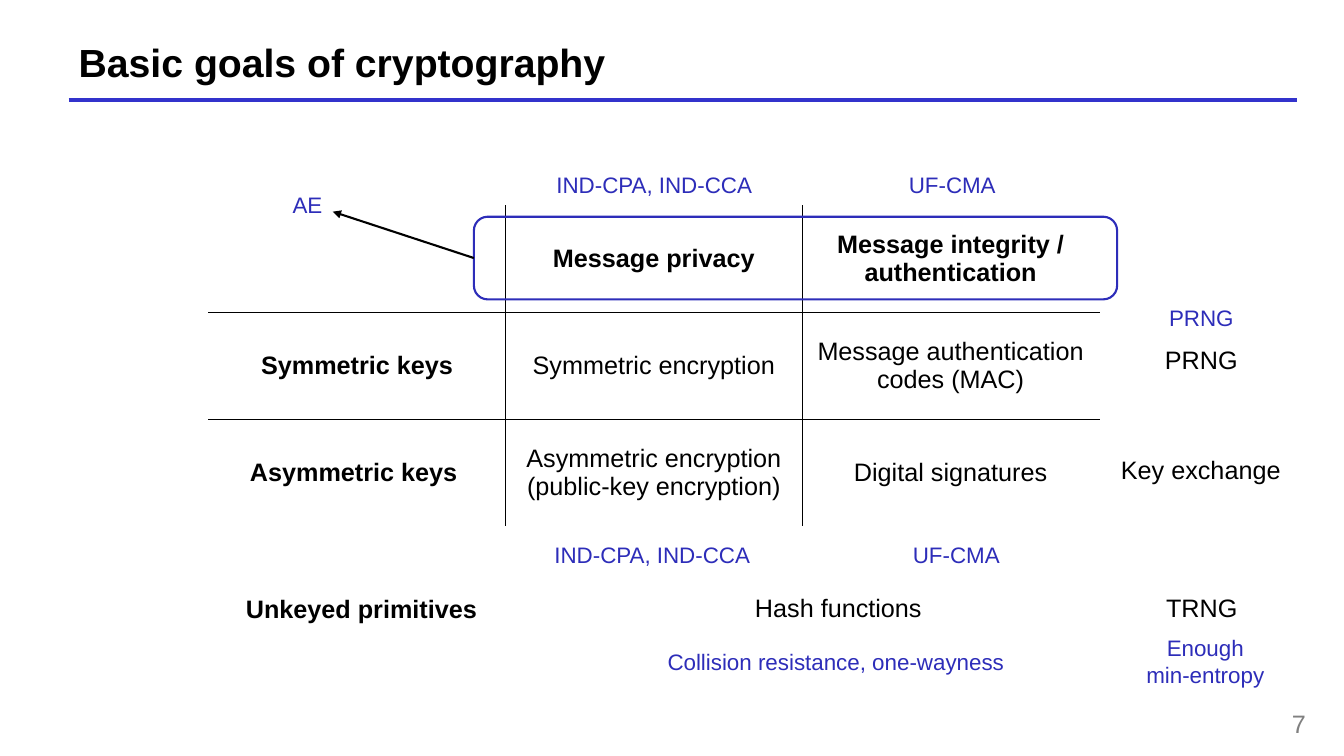
from dataclasses import dataclass

from lxml.etree import SubElement
from pptx import Presentation
from pptx.dml.color import RGBColor
from pptx.enum.shapes import MSO_CONNECTOR, MSO_SHAPE
from pptx.enum.text import MSO_ANCHOR, PP_ALIGN
from pptx.oxml import parse_xml
from pptx.oxml.ns import nsdecls, qn
from pptx.util import Inches, Pt


@dataclass(frozen=True)
class Theme:
    font: str = "Arial"
    black: str = "000000"
    blue: str = "2D2DB9"
    rule: str = "3333CC"
    gray: str = "808080"
    title: int = 28
    body: int = 18
    note: int = 16


THEME = Theme()

GOALS = [
    ["", "Message privacy", "Message integrity / authentication"],
    ["Symmetric keys", "Symmetric encryption", "Message authentication codes (MAC)"],
    ["Asymmetric keys ", "Asymmetric encryption (public-key encryption)", "Digital signatures"],
]

PRIMITIVES = [
    ("Key exchange", 11.01, 4.46, 1.8),
    ("Hash functions", 7.38, 5.83, 1.87),
    ("PRNG", 11.45, 3.37, 0.93),
    ("TRNG", 11.46, 5.83, 0.92),
]

SECURITY_NOTES = [
    ("IND-CPA, IND-CCA", 5.41, 1.65, 2.16, 0.37),
    ("IND-CPA, IND-CCA", 5.39, 5.32, 2.16, 0.37),
    ("UF-CMA", 8.91, 1.65, 1.07, 0.37),
    ("UF-CMA", 8.95, 5.32, 1.07, 0.37),
    ("AE", 2.8, 1.85, 0.5, 0.37),
    ("Collision resistance, one-wayness", 6.5, 6.38, 3.58, 0.37),
    ("PRNG", 11.49, 2.97, 0.85, 0.37),
    ("Enough \vmin-entropy ", 11.26, 6.24, 1.45, 0.64),
]


def set_attributes(target, values):
    for name, value in values.items():
        setattr(target, name, value)


def write_text(frame, text, size, color=THEME.black, bold=False, align=PP_ALIGN.CENTER):
    frame.text = text
    paragraph = frame.paragraphs[0]
    paragraph.alignment = align
    for run in paragraph.runs:
        set_attributes(run.font, {"name": THEME.font, "size": Pt(size), "bold": bold})
        run.font.color.rgb = RGBColor.from_string(color)


def add_label(slide, text, left, top, width, height, size, wrap=False,
              anchor=MSO_ANCHOR.TOP, **style):
    box = slide.shapes.add_textbox(Inches(left), Inches(top), Inches(width), Inches(height))
    set_attributes(box.text_frame, {"word_wrap": wrap, "vertical_anchor": anchor})
    write_text(box.text_frame, text, size, **style)


def add_title(slide, text):
    title = slide.shapes.title
    set_attributes(title, {"left": Inches(0.68), "top": Inches(0.36),
                           "width": Inches(12.18), "height": Inches(0.5)})
    set_attributes(title.text_frame, {"vertical_anchor": MSO_ANCHOR.MIDDLE, "word_wrap": True})
    write_text(title.text_frame, text, THEME.title, bold=True, align=PP_ALIGN.LEFT)


def add_line(slide, start, end, color, width, arrow=False):
    points = [Inches(value) for value in (*start, *end)]
    connector = slide.shapes.add_connector(MSO_CONNECTOR.STRAIGHT, *points)
    connector.line.color.rgb = RGBColor.from_string(color)
    connector.line.width = Pt(width)
    if arrow:
        SubElement(connector.line._get_or_add_ln(), qn("a:tailEnd"), type="triangle")
    SubElement(connector._element.spPr, qn("a:effectLst"))


def add_frame(slide, left, top, width, height):
    shape = slide.shapes.add_shape(MSO_SHAPE.ROUNDED_RECTANGLE, Inches(left), Inches(top),
                                   Inches(width), Inches(height))
    shape.shadow.inherit = False
    shape.fill.background()
    shape.line.color.rgb = RGBColor.from_string(THEME.blue)
    shape.line.width = Pt(1.5)


def add_borders(cell, sides):
    properties = cell._tc.get_or_add_tcPr()
    for side in sides:
        properties.append(parse_xml(
            f'<a:ln{side} {nsdecls("a")} w="{Pt(1)}"><a:solidFill>'
            f'<a:srgbClr val="{THEME.black}"/></a:solidFill></a:ln{side}>'))


def add_goal_table(slide, rows, left, top, width, height):
    last = len(rows) - 1
    table = slide.shapes.add_table(len(rows), len(rows[0]), Inches(left), Inches(top),
                                   Inches(width), Inches(height)).table
    set_attributes(table, {"first_row": False, "horz_banding": False})
    for row, texts in enumerate(rows):
        for column, text in enumerate(texts):
            cell = table.cell(row, column)
            inner = {"L": column > 0, "R": column < last, "T": row > 0, "B": row < last}
            add_borders(cell, [side for side, drawn in inner.items() if drawn])
            cell.fill.background()
            cell.vertical_anchor = MSO_ANCHOR.MIDDLE
            write_text(cell.text_frame, text, THEME.body, bold=row == 0 or column == 0)


def main():
    presentation = Presentation()
    set_attributes(presentation, {"slide_width": Inches(13.33), "slide_height": Inches(7.5)})
    slide = presentation.slides.add_slide(presentation.slide_layouts[5])
    add_line(slide, (0.68, 0.99), (12.86, 0.99), THEME.rule, 3)
    add_title(slide, "Basic goals of cryptography")
    add_label(slide, "7", 12.43, 6.98, 0.62, 0.36, THEME.body, wrap=True,
              color=THEME.gray, align=PP_ALIGN.RIGHT)
    add_goal_table(slide, GOALS, 2.07, 2.04, 8.83, 3.18)
    add_frame(slide, 4.7, 2.15, 6.38, 0.82)
    add_line(slide, (4.7, 2.56), (3.3, 2.1), THEME.black, 1.5, arrow=True)
    add_label(slide, "Unkeyed primitives", 2.34, 5.73, 2.75, 0.61, THEME.body, wrap=True,
              anchor=MSO_ANCHOR.MIDDLE, bold=True, align=PP_ALIGN.LEFT)
    for text, left, top, width in PRIMITIVES:
        add_label(slide, text, left, top, width, 0.4, THEME.body)
    for note in SECURITY_NOTES:
        add_label(slide, *note, THEME.note, color=THEME.blue)
    presentation.save("out.pptx")


if __name__ == "__main__":
    main()
